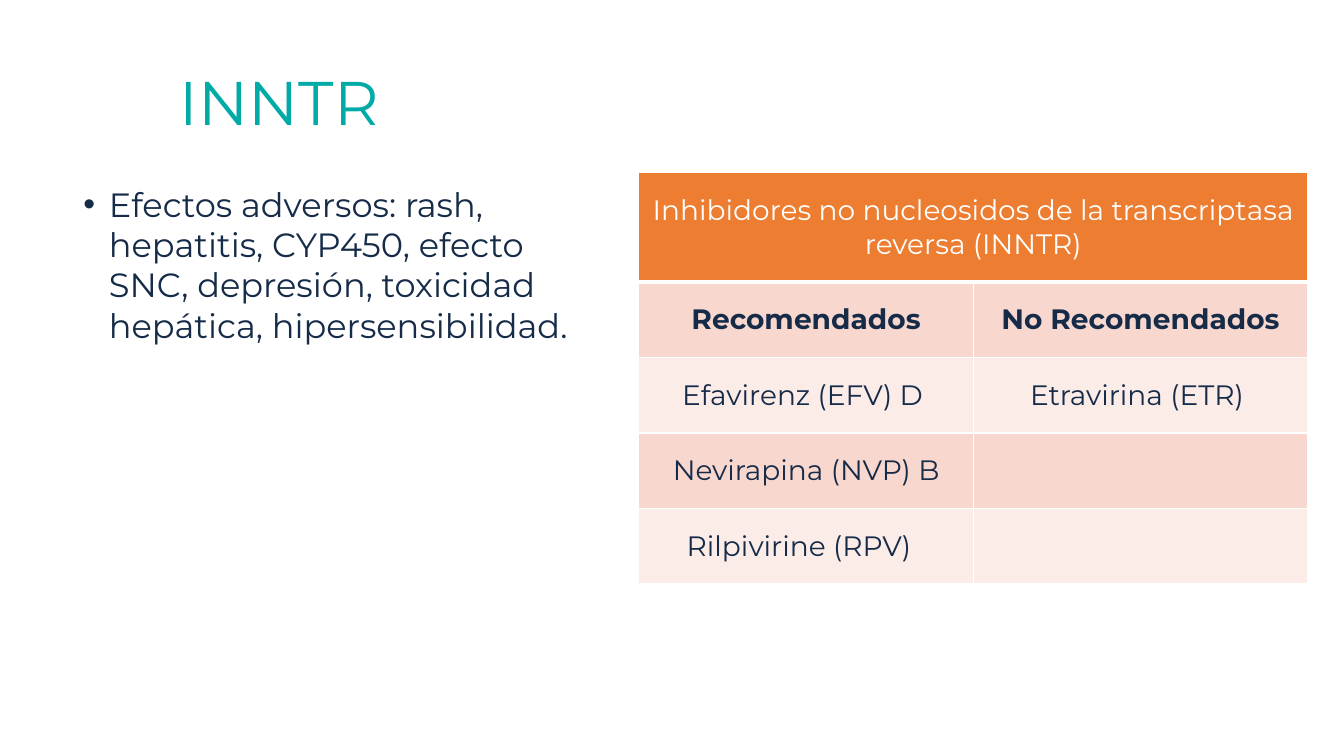
from dataclasses import dataclass

import pptx
import pptx.dml.color
import pptx.enum.text
import pptx.oxml
import pptx.oxml.ns
import pptx.util
from pptx.dml.color import RGBColor
from pptx.util import Cm

FONT = "Montserrat"
NAVY = RGBColor(0x15, 0x2B, 0x48)
TEAL = RGBColor(0x00, 0xAA, 0xA7)
ORANGE = RGBColor(0xED, 0x7D, 0x31)
ROSE = RGBColor(0xF8, 0xD7, 0xCE)
PALE_ROSE = RGBColor(0xFC, 0xEC, 0xE8)
WHITE = RGBColor(0xFF, 0xFF, 0xFF)

CELL_MARGIN = Cm(0.25)
COLUMN_WIDTH = Cm(8.43)
HEADING_HEIGHT = Cm(2.76)
ROW_HEIGHT = Cm(1.9)


@dataclass
class Entry:
    text: str = ""
    extra_right: float = 0  # added right margin in cm


ROWS = [
    [Entry("Inhibidores no nucleosidos de la transcriptasa reversa (INNTR)"), Entry()],
    [Entry("Recomendados"), Entry("No Recomendados")],
    [Entry("Efavirenz (EFV) D", 0.18), Entry("Etravirina (ETR)", 0.18)],
    [Entry("Nevirapina (NVP) B"), Entry()],
    [Entry("Rilpivirine (RPV)", 0.36), Entry()],
]


def style_text(frame, size: float, color: RGBColor, bold: bool = False) -> None:
    for para in frame.paragraphs:
        for span in para.runs:
            span.font.name = FONT
            span.font.size = pptx.util.Pt(size)
            span.font.color.rgb = color
            span.font.bold = bold


def place(box, left: float, top: float, width: float, height: float) -> None:
    box.left, box.top, box.width, box.height = Cm(left), Cm(top), Cm(width), Cm(height)


def add_borders(cell, bottom_points: float) -> None:
    """Draw white cell borders, placed ahead of the fill as the schema asks."""
    properties = cell._tc.get_or_add_tcPr()
    for index, side in enumerate(("lnL", "lnR", "lnT", "lnB")):
        width = pptx.util.Pt(bottom_points if side == "lnB" else 1)
        border = pptx.oxml.parse_xml(
            f'<a:{side} {pptx.oxml.ns.nsdecls("a")} w="{width}"><a:solidFill>'
            f'<a:srgbClr val="{WHITE}"/></a:solidFill></a:{side}>'
        )
        properties.insert(index, border)


def fill_cell(cell, entry: Entry, row: int) -> None:
    cell.fill.solid()
    cell.fill.fore_color.rgb = ORANGE if row == 0 else ROSE if row % 2 else PALE_ROSE
    add_borders(cell, bottom_points=3 if row == 0 else 1)
    cell.vertical_anchor = pptx.enum.text.MSO_ANCHOR.MIDDLE
    cell.margin_left = CELL_MARGIN
    cell.margin_right = CELL_MARGIN + Cm(entry.extra_right)
    if entry.text:
        cell.text_frame.text = entry.text
        cell.text_frame.paragraphs[0].alignment = pptx.enum.text.PP_ALIGN.CENTER
        style_text(cell.text_frame, 20, WHITE if row == 0 else NAVY, bold=row == 1)


def add_drug_table(page) -> None:
    table = page.shapes.add_table(
        len(ROWS), 2, Cm(16.1), Cm(4.35), 2 * COLUMN_WIDTH,
        HEADING_HEIGHT + (len(ROWS) - 1) * ROW_HEIGHT,
    ).table
    for column in table.columns:
        column.width = COLUMN_WIDTH
    table.cell(0, 0).merge(table.cell(0, 1))
    for row, entries in enumerate(ROWS):
        table.rows[row].height = ROW_HEIGHT if row else HEADING_HEIGHT
        for column, entry in enumerate(entries):
            fill_cell(table.cell(row, column), entry, row)


def write_title(title) -> None:
    place(title, 2.34, 0.81, 9.4, 3.68)
    frame = title.text_frame
    frame.text = "INNTR"
    frame.auto_size = pptx.enum.text.MSO_AUTO_SIZE.NONE
    frame.vertical_anchor = pptx.enum.text.MSO_ANCHOR.MIDDLE
    frame.paragraphs[0].alignment = pptx.enum.text.PP_ALIGN.CENTER
    frame.paragraphs[0].line_spacing = 0.9
    style_text(frame, 44, TEAL)


def write_side_effects(body) -> None:
    place(body, 1.85, 4.5, 13.18, 5.82)
    frame = body.text_frame
    frame.text = (
        "Efectos adversos: rash, hepatitis, CYP450, efecto SNC, depresión, "
        "toxicidad hepática, hipersensibilidad."
    )
    frame.auto_size = pptx.enum.text.MSO_AUTO_SIZE.NONE
    para = frame.paragraphs[0]
    para.space_before = pptx.util.Pt(0)
    properties = para._p.get_or_add_pPr()
    properties.set("marL", str(Cm(0.64)))
    properties.set("indent", str(-Cm(0.64)))
    namespace = pptx.oxml.ns.nsdecls("a")
    properties.append(pptx.oxml.parse_xml(f'<a:buFont {namespace} typeface="Arial"/>'))
    properties.append(pptx.oxml.parse_xml(f'<a:buChar {namespace} char="•"/>'))
    style_text(frame, 24, NAVY)


def main() -> None:
    deck = pptx.Presentation()
    deck.slide_width, deck.slide_height = Cm(33.87), Cm(19.05)
    page = deck.slides.add_slide(deck.slide_layouts[1])
    write_title(page.shapes.title)
    write_side_effects(page.placeholders[1])
    add_drug_table(page)
    deck.save("out.pptx")


if __name__ == "__main__":
    main()
